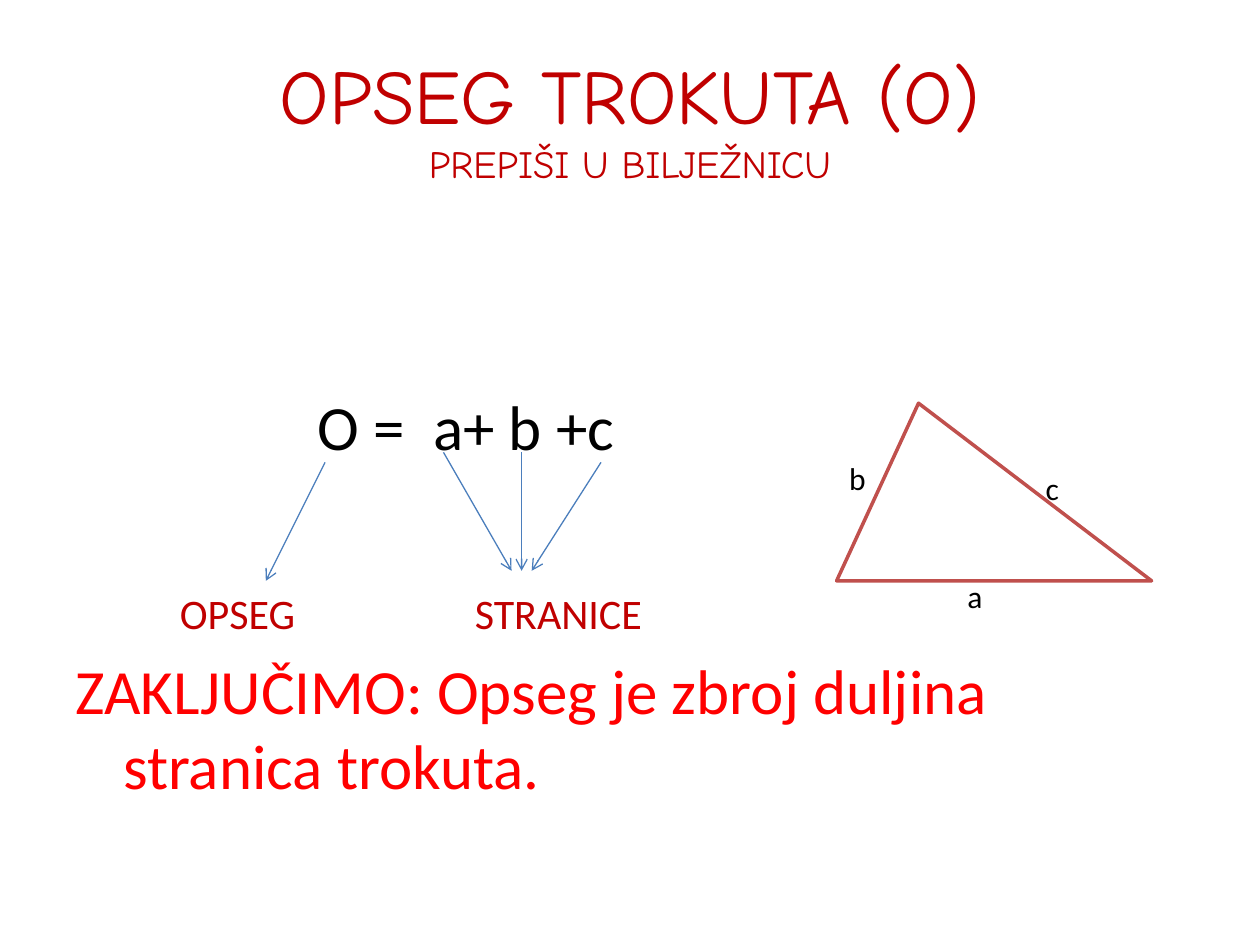
from dataclasses import dataclass

from lxml.etree import SubElement
from pptx import Presentation
from pptx.dml.color import RGBColor
from pptx.enum.shapes import MSO_CONNECTOR, MSO_SHAPE
from pptx.enum.text import MSO_ANCHOR, PP_ALIGN
from pptx.oxml.ns import qn
from pptx.util import Inches, Pt


@dataclass(frozen=True)
class Theme:
    """Colours, fonts and type sizes of the slide."""
    heading_font: str = "Comic Neue"
    body_font: str = "Calibri"
    black: str = "000000"
    white: str = "FFFFFF"
    dark_red: str = "C00000"
    red: str = "FF0000"
    arrow_blue: str = "4B7EBC"
    triangle_red: str = "C0504D"
    title_size: int = 44
    subtitle_size: int = 22
    body_size: int = 36
    caption_size: int = 24
    side_size: int = 18


THEME = Theme()


def format_run(run, font_name, size, color):
    """Set the font, size and colour of a run."""
    run.font.name = font_name
    run.font.size = Pt(size)
    run.font.color.rgb = RGBColor.from_string(color)


def add_title(slide, title, subtitle):
    """Fill the title placeholder with a heading and a smaller second line."""
    shape = slide.shapes.title
    shape.left, shape.top = Inches(0.5), Inches(0.3)
    shape.width, shape.height = Inches(9), Inches(1.25)
    shape.text_frame.vertical_anchor = MSO_ANCHOR.MIDDLE
    paragraph = shape.text_frame.paragraphs[0]
    paragraph.text = f"{title}\v{subtitle}"
    paragraph.alignment = PP_ALIGN.CENTER
    for run, size in zip(paragraph.runs, (THEME.title_size, THEME.subtitle_size)):
        format_run(run, THEME.heading_font, size, THEME.dark_red)


def add_text(slide, text, left, top, width, height, size, color, hanging=0):
    """Add a wrapped one-paragraph text box with an optional hanging indent."""
    box = slide.shapes.add_textbox(Inches(left), Inches(top), Inches(width), Inches(height))
    box.text_frame.word_wrap = True
    paragraph = box.text_frame.paragraphs[0]
    paragraph.text = text
    format_run(paragraph.runs[0], THEME.body_font, size, color)
    if hanging:
        properties = paragraph._p.get_or_add_pPr()
        properties.set("marL", str(Inches(hanging)))
        properties.set("indent", str(-Inches(hanging)))


def add_arrow(slide, start, end):
    """Add a thin straight arrow between two points."""
    arrow = slide.shapes.add_connector(
        MSO_CONNECTOR.STRAIGHT, *(Inches(value) for value in (*start, *end)))
    arrow.line.color.rgb = RGBColor.from_string(THEME.arrow_blue)
    arrow.line.width = Pt(0.75)
    SubElement(arrow.line._get_or_add_ln(), qn("a:tailEnd"), type="arrow")
    SubElement(arrow._element.spPr, qn("a:effectLst"))


def add_triangle(slide):
    """Add the outlined scalene triangle."""
    triangle = slide.shapes.add_shape(
        MSO_SHAPE.ISOSCELES_TRIANGLE, Inches(6.64), Inches(3.2), Inches(2.5), Inches(1.41))
    triangle.adjustments[0] = 0.26
    triangle.shadow.inherit = False
    triangle.fill.solid()
    triangle.fill.fore_color.rgb = RGBColor.from_string(THEME.white)
    triangle.line.color.rgb = RGBColor.from_string(THEME.triangle_red)
    triangle.line.width = Pt(2)


def main():
    """Build the slide about the perimeter of a triangle."""
    presentation = Presentation()
    presentation.slide_width, presentation.slide_height = Inches(10), Inches(7.5)
    slide = presentation.slides.add_slide(presentation.slide_layouts[5])

    add_title(slide, "OPSEG TROKUTA (O)", "PREPIŠI U BILJEŽNICU")
    add_text(slide, "O =  a+ b +c", 2.42, 3.03, 3, 0.71, THEME.body_size, THEME.black)
    add_text(slide, "ZAKLJUČIMO: Opseg je zbroj duljina stranica trokuta.",
             0.5, 5.12, 9, 1.32, THEME.body_size, THEME.red, hanging=0.38)

    for caption, left, width in (("STRANICE", 3.67, 1.64), ("OPSEG", 1.33, 1.56)):
        add_text(slide, caption, left, 4.61, width, 0.5, THEME.caption_size, THEME.dark_red)

    for start, end in (
        ((3.52, 3.59), (4.06, 4.53)),
        ((2.58, 3.67), (2.11, 4.61)),
        ((4.14, 3.59), (4.14, 4.53)),
        ((4.77, 3.67), (4.22, 4.53)),
    ):
        add_arrow(slide, start, end)

    add_triangle(slide)
    for side, left, top, width in (
        ("a", 7.58, 4.53, 0.64), ("c", 8.2, 3.67, 0.31), ("b", 6.64, 3.59, 0.54),
    ):
        add_text(slide, side, left, top, width, 0.4, THEME.side_size, THEME.black)

    presentation.save("out.pptx")


if __name__ == "__main__":
    main()
